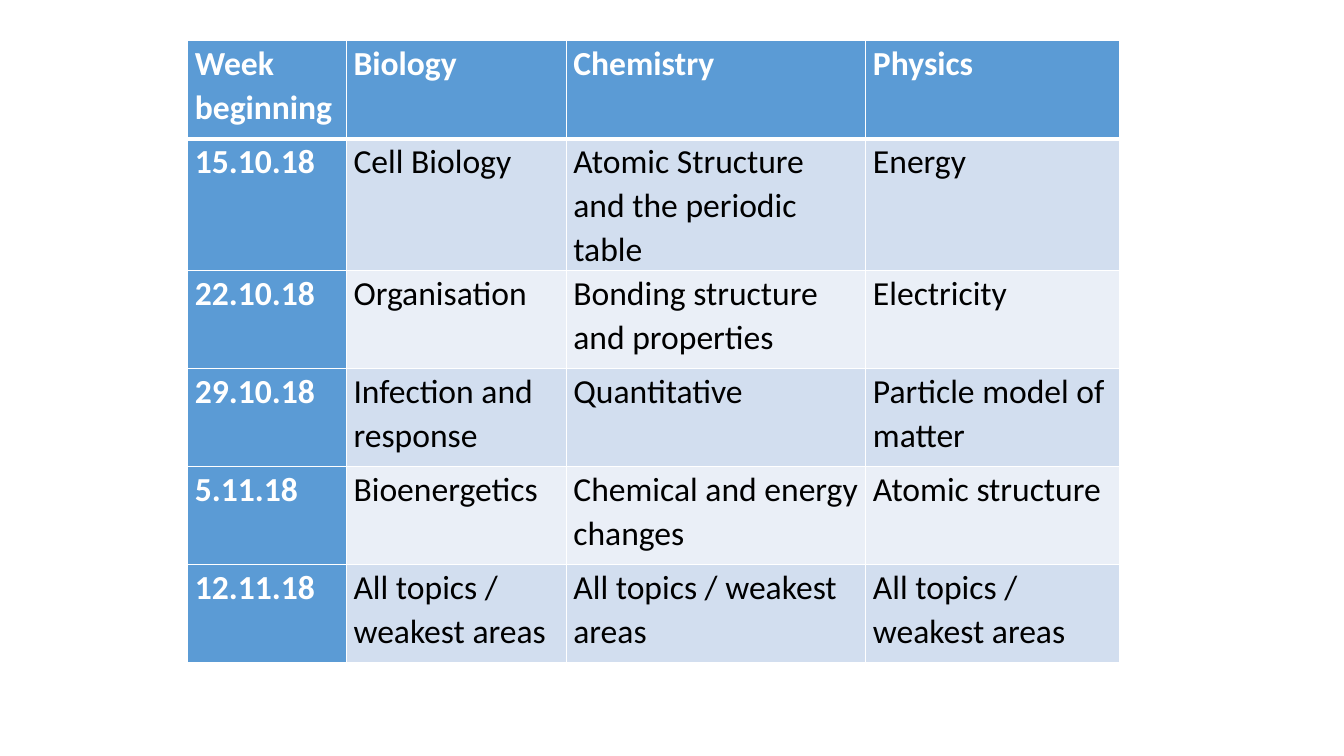
from dataclasses import dataclass

import lxml.etree
import pptx
import pptx.dml.color
import pptx.oxml.ns
import pptx.table
import pptx.util

Cm = pptx.util.Cm
Color = pptx.dml.color.RGBColor


@dataclass(frozen=True)
class Theme:
    font: str = "Calibri"
    text_size: int = 24
    line_spacing: float = 1.07
    heading_fill: str = "5B9BD5"
    heading_text: str = "FFFFFF"
    body_text: str = "000000"
    body_fills: tuple[str, str] = ("D2DEEF", "EAEFF7")
    border: str = "FFFFFF"
    thin_border: int = 1
    thick_border: int = 3


@dataclass(frozen=True)
class Week:
    beginning: str
    biology: str
    chemistry: str
    physics: str

    def texts(self) -> tuple[str, ...]:
        return self.beginning, self.biology, self.chemistry, self.physics


THEME = Theme()
COLUMN_WIDTHS = (4.0, 5.54, 7.55, 6.4)
ROW_HEIGHT = 2.47
SIDE_MARGIN = 0.18
ANY_AREA = "All topics / weakest areas"
REVISION_PLAN = (
    Week("Week beginning", "Biology", "Chemistry", "Physics"),
    Week("15.10.18", "Cell Biology", "Atomic Structure and the periodic table", "Energy"),
    Week("22.10.18", "Organisation", "Bonding structure and properties", "Electricity"),
    Week("29.10.18", "Infection and response", "Quantitative", "Particle model of matter"),
    Week("5.11.18", "Bioenergetics", "Chemical and energy changes", "Atomic structure"),
    Week("12.11.18", ANY_AREA, ANY_AREA, ANY_AREA),
)


def add_borders(cell: pptx.table._Cell, row: int) -> None:
    """Rule all four sides, thicker between the heading row and the first week."""
    qn = pptx.oxml.ns.qn
    properties = cell._tc.get_or_add_tcPr()
    thick_side = {0: "B", 1: "T"}.get(row)
    for side in "LRTB":
        points = THEME.thick_border if side == thick_side else THEME.thin_border
        line = lxml.etree.SubElement(properties, qn(f"a:ln{side}"), w=str(pptx.util.Pt(points)))
        fill = lxml.etree.SubElement(line, qn("a:solidFill"))
        lxml.etree.SubElement(fill, qn("a:srgbClr"), val=THEME.border)


def fill_cell(cell: pptx.table._Cell, text: str, row: int, column: int) -> None:
    is_heading = row == 0 or column == 0
    add_borders(cell, row)
    cell.fill.solid()
    cell.fill.fore_color.rgb = Color.from_string(
        THEME.heading_fill if is_heading else THEME.body_fills[(row - 1) % 2])
    cell.margin_left = cell.margin_right = Cm(SIDE_MARGIN)
    cell.margin_top = cell.margin_bottom = 0
    cell.text = text
    para = cell.text_frame.paragraphs[0]
    para.line_spacing = THEME.line_spacing
    para.font.name = THEME.font
    para.font.size = pptx.util.Pt(THEME.text_size)
    para.font.bold = is_heading
    para.font.color.rgb = Color.from_string(
        THEME.heading_text if is_heading else THEME.body_text)


def main() -> None:
    deck = pptx.Presentation()
    deck.slide_width, deck.slide_height = Cm(33.87), Cm(19.05)
    slide = deck.slides.add_slide(deck.slide_layouts[6])
    table = slide.shapes.add_table(
        len(REVISION_PLAN), len(COLUMN_WIDTHS), Cm(4.73), Cm(1.03),
        Cm(sum(COLUMN_WIDTHS)), Cm(ROW_HEIGHT * len(REVISION_PLAN))).table
    table.first_col = True
    for column, width in zip(table.columns, COLUMN_WIDTHS):
        column.width = Cm(width)
    for row, week in enumerate(REVISION_PLAN):
        table.rows[row].height = Cm(ROW_HEIGHT)
        for column, text in enumerate(week.texts()):
            fill_cell(table.cell(row, column), text, row, column)
    deck.save("out.pptx")


if __name__ == "__main__":
    main()
